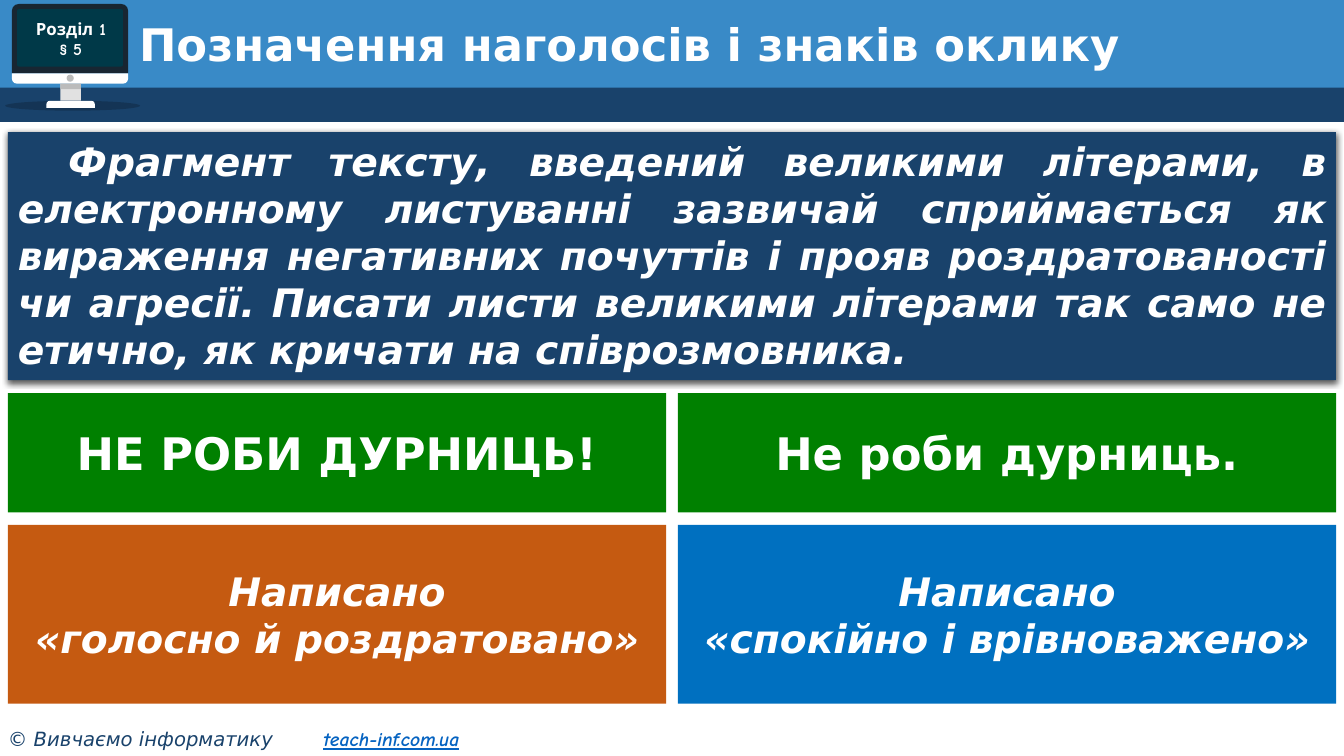
from lxml import etree
from pptx import Presentation
from pptx.dml.color import RGBColor
from pptx.enum.shapes import MSO_SHAPE
from pptx.enum.text import MSO_ANCHOR, MSO_AUTO_SIZE, PP_ALIGN
from pptx.oxml import parse_xml
from pptx.oxml.ns import qn
from pptx.util import Cm, Pt

RECT, OVAL = MSO_SHAPE.RECTANGLE, MSO_SHAPE.OVAL
ROUNDED, TWO_ROUNDED = MSO_SHAPE.ROUNDED_RECTANGLE, MSO_SHAPE.ROUND_2_SAME_RECTANGLE
LEFT, CENTER, JUSTIFY = PP_ALIGN.LEFT, PP_ALIGN.CENTER, PP_ALIGN.JUSTIFY
MIDDLE, TOP = MSO_ANCHOR.MIDDLE, MSO_ANCHOR.TOP
SANS, COMIC = "DejaVu Sans", "Comic Neue"
DRAWING = "http://schemas.openxmlformats.org/drawingml/2006/main"
COLORS = {
    "sky": "398AC7", "navy": "19426B", "black": "000000", "bezel": "182632",
    "white": "FFFFFF", "light grey": "E1E1E1", "grey": "BBBBBB", "screen": "003948",
    "green": "008000", "orange": "C55A11", "blue": "0070C0", "link": "0563C1",
}
WIDTH, HEIGHT = 33.87, 19.05


def add_block(kind, place, color, adjustments=()):
    """Add a borderless filled shape; place is left, top, width, height in cm."""
    block = page.shapes.add_shape(kind, *[Cm(length) for length in place])
    block.shadow.inherit = False
    block.fill.solid()
    block.fill.fore_color.rgb = RGBColor.from_string(COLORS[color])
    block.line.fill.background()
    for index, value in enumerate(adjustments):
        block.adjustments[index] = value
    return block


def write_text(shape, text, size, align=CENTER, anchor=MIDDLE, font=SANS, italic=False):
    """Fill a shape with bold white text, one paragraph per line."""
    frame = shape.text_frame
    frame.text = text
    frame.word_wrap = True
    frame.auto_size = MSO_AUTO_SIZE.NONE
    frame.vertical_anchor = anchor
    for para in frame.paragraphs:
        para.alignment = align
        for span in para.runs:
            span.font.name, span.font.size = font, Pt(size)
            span.font.bold, span.font.italic = True, italic
            span.font.color.rgb = RGBColor.from_string(COLORS["white"])


deck = Presentation()
deck.slide_width, deck.slide_height = Cm(WIDTH), Cm(HEIGHT)
page = deck.slides.add_slide(deck.slide_layouts[5])

# Header bands
add_block(RECT, (0, 0, WIDTH, 2.31), "sky")
add_block(RECT, (0, 2.21, WIDTH, 0.86), "navy")

# Computer monitor with the chapter number
ground = add_block(OVAL, (0.13, 2.54, 3.4, 0.25), "black")
ground_color = ground.element.spPr.find(qn("a:solidFill")).find(qn("a:srgbClr"))
etree.SubElement(ground_color, qn("a:alpha")).set("val", "20000")
monitor_parts = [
    (TWO_ROUNDED, (0.3, 0.1, 2.93, 1.75), "bezel", (0.1, 0)),
    (TWO_ROUNDED, (0.3, 1.85, 2.93, 0.26), "white", (0, 0.5)),
    (RECT, (1.52, 2.11, 0.52, 0.43), "light grey", ()),
    (RECT, (1.52, 2.11, 0.52, 0.14), "grey", ()),
    (TWO_ROUNDED, (1.17, 2.54, 1.22, 0.18), "white", (0.5, 0)),
    (OVAL, (1.68, 1.88, 0.18, 0.18), "grey", ()),
    (ROUNDED, (0.43, 0.23, 2.67, 1.45), "screen", (0.036,)),
]
for kind, place, color, adjustments in monitor_parts:
    add_block(kind, place, color, adjustments)
chapter = page.shapes.add_textbox(Cm(0.33), Cm(0.23), Cm(2.92), Cm(1.5))
write_text(chapter, "Розділ 1\n§ 5", 12, font=COMIC)

# Footer: a tab stop separates the credit from the site
footer = page.shapes.add_textbox(Cm(-0.05), Cm(18.19), Cm(13.28), Cm(0.86))
write_text(footer, "© Вивчаємо інформатику\t", 14, LEFT, TOP, italic=True)
para = footer.text_frame.paragraphs[0]
tabs = etree.SubElement(para._p.get_or_add_pPr(), qn("a:tabLst"))
etree.SubElement(tabs, qn("a:tab"), pos=str(Cm(7.95)), algn="l")
credit = para.runs[0]
credit.font.bold = False
credit.font.color.rgb = RGBColor.from_string(COLORS["navy"])
site = para.add_run()
site.text = "teach-inf.com.ua"
site.font.name, site.font.size = COMIC, Pt(14)
site.font.bold = site.font.italic = site.font.underline = True
site.font.color.rgb = RGBColor.from_string(COLORS["link"])

# Title, brought in front of the header bands
title = page.shapes.title
title.left, title.top, title.width, title.height = Cm(3.25), Cm(0.46), Cm(29.77), Cm(1.47)
write_text(title, "Позначення наголосів і знаків оклику", 32, LEFT)
title.text_frame.paragraphs[0].line_spacing = 0.9
title.element.getparent().append(title.element)

# Main statement
MARGIN, GAP = 0.2, 0.3
statement = add_block(RECT, (MARGIN, 3.33, WIDTH - 2 * MARGIN, 6.25), "navy")
write_text(
    statement,
    "Фрагмент тексту, введений великими літерами, в електронному листуванні "
    "зазвичай сприймається як вираження негативних почуттів і прояв "
    "роздратованості чи агресії. Писати листи великими літерами так само не "
    "етично, як кричати на співрозмовника.",
    28, JUSTIFY, TOP, italic=True,
)
statement.text_frame.paragraphs[0]._p.get_or_add_pPr().set("indent", str(Cm(1.27)))
effects = statement.element.spPr.find(qn("a:effectLst"))
effects.append(parse_xml(
    f'<a:outerShdw xmlns:a="{DRAWING}" blurRad="{Pt(4.5)}" dist="{Pt(1.5)}" dir="5400000">'
    f'<a:srgbClr val="{COLORS["black"]}"><a:alpha val="63000"/></a:srgbClr></a:outerShdw>'
))

# Two examples, each above the way it sounds
card_width = (WIDTH - 2 * MARGIN - GAP) / 2
examples = [
    ("НЕ РОБИ ДУРНИЦЬ!", "Написано\n«голосно й роздратовано»", "orange"),
    ("Не роби дурниць.", "Написано\n«спокійно і врівноважено»", "blue"),
]
for column, (phrase, tone, tone_color) in enumerate(examples):
    left = MARGIN + column * (card_width + GAP)
    write_text(add_block(RECT, (left, 9.91, card_width, 3), "green"), phrase, 32)
    tone_card = add_block(RECT, (left, 13.23, card_width, 4.5), tone_color)
    write_text(tone_card, tone, 28, italic=True)

deck.save("out.pptx")
